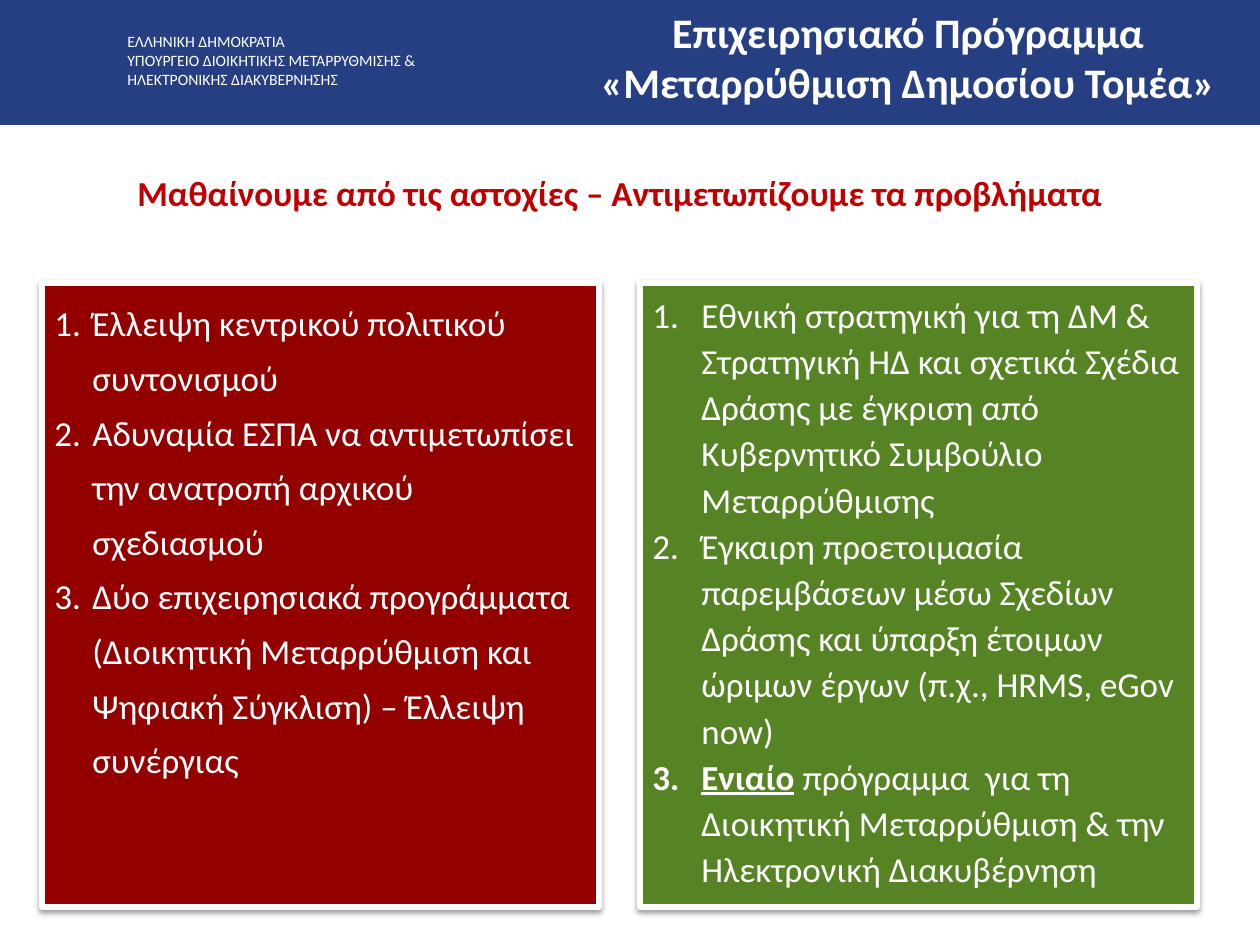
from lxml import etree
from pptx import Presentation
from pptx.dml.color import RGBColor
from pptx.enum.shapes import MSO_SHAPE
from pptx.enum.text import MSO_ANCHOR, PP_ALIGN
from pptx.oxml import parse_xml
from pptx.oxml.ns import qn
from pptx.util import Pt

PX = 914400 / 126
RECT = MSO_SHAPE.RECTANGLE
TOP, MIDDLE = MSO_ANCHOR.TOP, MSO_ANCHOR.MIDDLE
LEFT, CENTER = PP_ALIGN.LEFT, PP_ALIGN.CENTER
WHITE = RGBColor(0xFF, 0xFF, 0xFF)
NAVY = RGBColor(0x26, 0x3E, 0x82)
DARK_RED = RGBColor(0x92, 0x00, 0x00)
GREEN = RGBColor(0x56, 0x84, 0x24)
RED = RGBColor(0xC0, 0x00, 0x00)

SHADOW = (
    '<a:outerShdw xmlns:a="http://schemas.openxmlformats.org/drawingml/2006/main" '
    'blurRad="39370" dist="20320" dir="5400000" rotWithShape="0">'
    '<a:srgbClr val="000000"><a:alpha val="38000"/></a:srgbClr></a:outerShdw>'
)


def emu(*lengths):
    return [round(n * PX) for n in lengths]


def add_run(p, text, **fmt):
    r = p.add_run()
    r.text = text
    color = fmt.pop("color", WHITE)
    for name, value in {"name": "Calibri", **fmt}.items():
        setattr(r.font, name, value)
    r.font.color.rgb = color


prs = Presentation()
prs.slide_width, prs.slide_height = emu(1260, 945)
s = prs.slides.add_slide(prs.slide_layouts[6])

# Header band
sp = s.shapes.add_shape(RECT, *emu(0, 0, 1260, 125))
sp.shadow.inherit = False
sp.fill.solid()
sp.fill.fore_color.rgb = NAVY
sp.line.fill.background()

# Ministry name, slide title and programme name
texts = [
    ((115, 26, 326, 71), TOP, LEFT, {"size": Pt(9)},
     ["ΕΛΛΗΝΙΚΗ ΔΗΜΟΚΡΑΤΙΑ",
      "ΥΠΟΥΡΓΕΙΟ ΔΙΟΙΚΗΤΙΚΗΣ ΜΕΤΑΡΡΥΘΜΙΣΗΣ &",
      "ΗΛΕΚΤΡΟΝΙΚΗΣ ΔΙΑΚΥΒΕΡΝΗΣΗΣ"]),
    ((53, 136, 1134, 112), MIDDLE, CENTER,
     {"size": Pt(20), "bold": True, "color": RED},
     ["Μαθαίνουμε από τις αστοχίες – Αντιμετωπίζουμε τα προβλήματα"]),
    ((577, 0, 662, 115), TOP, CENTER, {"size": Pt(24), "bold": True},
     ["Επιχειρησιακό Πρόγραμμα", "«Μεταρρύθμιση Δημοσίου Τομέα»"]),
]
for box, anchor, align, fmt, lines in texts:
    tf = s.shapes.add_textbox(*emu(*box)).text_frame
    tf.word_wrap = True
    tf.vertical_anchor = anchor
    for i, line in enumerate(lines):
        p = tf.add_paragraph() if i else tf.paragraphs[0]
        p.alignment = align
        add_run(p, line, **fmt)

# Problems (left) and answers (right); each item is a list of (text, format)
panels = [
    (42, DARK_RED, 38, 1.3, [
        [("Έλλειψη κεντρικού πολιτικού συντονισμού", {})],
        [("Αδυναμία ΕΣΠΑ να αντιμετωπίσει την ανατροπή αρχικού σχεδιασμού", {})],
        [("Δύο επιχειρησιακά προγράμματα (Διοικητική Μεταρρύθμιση και "
          "Ψηφιακή Σύγκλιση) – Έλλειψη συνέργιας", {})],
    ]),
    (640, GREEN, 49, 1.1, [
        [("Εθνική στρατηγική για τη ΔΜ & Στρατηγική ΗΔ και σχετικά Σχέδια "
          "Δράσης με έγκριση από Κυβερνητικό Συμβούλιο Μεταρρύθμισης", {})],
        [("Έγκαιρη προετοιμασία παρεμβάσεων μέσω Σχεδίων Δράσης και ύπαρξη "
          "έτοιμων ώριμων έργων (π.χ., HRMS, eGov now)", {})],
        [("Ενιαίο", {"bold": True, "underline": True}),
         (" πρόγραμμα  για τη Διοικητική Μεταρρύθμιση & την "
          "Ηλεκτρονική Διακυβέρνηση", {})],
    ]),
]
for left, color, indent, spacing, items in panels:
    sp = s.shapes.add_shape(RECT, *emu(left, 283, 557, 624))
    sp.fill.solid()
    sp.fill.fore_color.rgb = color
    sp.line.color.rgb = WHITE
    sp.line.width = Pt(3)
    sp.shadow.inherit = False
    sp._element.spPr.find(qn("a:effectLst")).append(parse_xml(SHADOW))
    tf = sp.text_frame
    tf.word_wrap = True
    tf.vertical_anchor = TOP
    for i, item in enumerate(items):
        p = tf.add_paragraph() if i else tf.paragraphs[0]
        p.alignment = LEFT
        p.line_spacing = spacing
        pPr = p._p.get_or_add_pPr()
        [margin] = emu(indent)
        pPr.set("marL", str(margin))
        pPr.set("indent", str(-margin))
        etree.SubElement(pPr, qn("a:buFont"), typeface="+mj-lt")
        etree.SubElement(pPr, qn("a:buAutoNum"), type="arabicPeriod")
        for text, fmt in item:
            add_run(p, text, size=Pt(20), **fmt)

prs.save("out.pptx")
